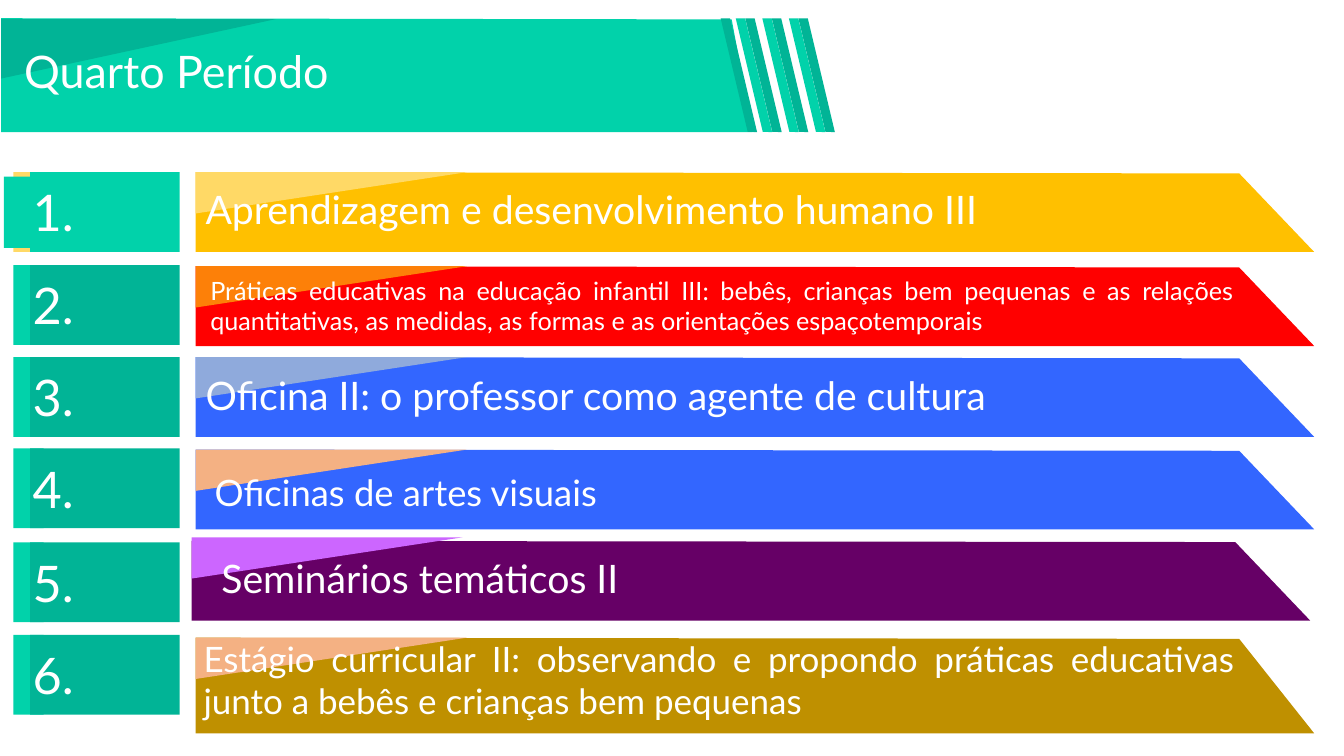
from pptx import Presentation
from pptx.dml.color import RGBColor
from pptx.enum.shapes import MSO_SHAPE
from pptx.enum.text import PP_ALIGN
from pptx.util import Cm, Pt

COLORS = {
    "teal": "01D2AA",
    "dark teal": "01B496",
    "white": "FFFFFF",
    "amber": "FFC000",
    "light amber": "FFD966",
    "red": "FF0000",
    "orange": "FD8008",
    "blue": "3366FF",
    "light blue": "8FAADC",
    "peach": "F4B183",
    "purple": "660066",
    "lilac": "CC66FF",
    "ochre": "BF9000",
}


def paint(shape, color):
    shape.shadow.inherit = False
    shape.fill.solid()
    shape.fill.fore_color.rgb = RGBColor.from_string(COLORS[color])
    shape.line.fill.background()


def add_text(page, text, left, top, width, height, size, align):
    box = page.shapes.add_textbox(Cm(left), Cm(top), Cm(width), Cm(height))
    box.text_frame.word_wrap = True
    para = box.text_frame.paragraphs[0]
    para.alignment = align
    span = para.add_run()
    span.text = text
    span.font.name = "Lato"
    span.font.size = Pt(size)
    span.font.color.rgb = RGBColor.from_string(COLORS["white"])
    return box


deck = Presentation()
deck.slide_width = Cm(33.87)
deck.slide_height = Cm(19.05)
page = deck.slides.add_slide(deck.slide_layouts[6])

title_size = (18.41, 18.94, 2.87, 6.93, 1.5)
bar_size = (26.3, 28.19, 2.01, 6.83, 1.04)
tall_bar_size = (26.3, 28.19, 2.41, 6.83, 1.04)

banners = [
    (0.03, 0.46, title_size, "teal", "dark teal", 0.48,
     "Quarto Período", (0.36, 0.97, 18.14, 1.63), 32),
    (4.93, 4.34, bar_size, "amber", "light amber", 4.34,
     "Aprendizagem e desenvolvimento humano III", (4.93, 4.55, 26.29, 1.45), 28),
    (4.93, 6.71, bar_size, "red", "orange", 6.71,
     "Práticas educativas na educação infantil III: bebês, crianças bem pequenas "
     "e as relações quantitativas, as medidas, as formas e as orientações "
     "espaçotemporais", (5.05, 6.81, 26.29, 1.8), 18),
    (4.93, 9, bar_size, "blue", "light blue", 9,
     "Oficina II: o professor como agente de cultura", (4.93, 9.22, 26.29, 1.45), 28),
    (4.93, 11.33, bar_size, "blue", "peach", 11.33,
     "Oficinas de artes visuais", (5.16, 11.73, 26.29, 1.37), 26),
    (4.83, 13.63, bar_size, "purple", "lilac", 13.54,
     "Seminários temáticos II", (5.33, 13.84, 26.29, 1.45), 28),
    (4.93, 16.07, tall_bar_size, "ochre", "peach", 16.07,
     "Estágio curricular II: observando e propondo práticas educativas junto a "
     "bebês e crianças bem pequenas", (4.88, 15.93, 26.47, 2.39), 25),
]

for left, top, size, color, corner_color, corner_top, text, frame, points in banners:
    top_width, width, height, corner_width, corner_height = size
    outline = page.shapes.build_freeform(Cm(left), Cm(top))
    outline.add_line_segments([
        (Cm(left + top_width), Cm(top + 0.03)),
        (Cm(left + width), Cm(top + height)),
        (Cm(left), Cm(top + height)),
    ])
    paint(outline.convert_to_shape(), color)

    offset = (corner_width - corner_height) / 2
    corner = page.shapes.add_shape(
        MSO_SHAPE.RIGHT_TRIANGLE, Cm(left + offset), Cm(corner_top - offset),
        Cm(corner_height), Cm(corner_width))
    corner.rotation = 90
    paint(corner, corner_color)
    add_text(page, text, *frame, points, PP_ALIGN.JUSTIFY)

stripes = [(17.12, "dark teal")]
for pair in range(3):
    stripes.append((17.5 + 0.67 * pair, "teal"))
    stripes.append((17.74 + 0.67 * pair, "dark teal"))

for left, color in stripes:
    stripe = page.shapes.add_shape(
        MSO_SHAPE.PARALLELOGRAM, Cm(left), Cm(1.78), Cm(3), Cm(0.23))
    stripe.adjustments[0] = 0.24
    stripe.rotation = 76.6
    paint(stripe, color)

tile_tops = [4.34, 6.68, 9, 11.3, 13.67, 16]
for number, top in enumerate(tile_tops, 1):
    first = number == 1
    edge_color = "light amber" if first else "teal"
    tile_color = "teal" if first else "dark teal"
    for left, width, color in [(0.34, 0.76, edge_color), (0.76, 3.77, tile_color)]:
        tile = page.shapes.add_shape(
            MSO_SHAPE.RECTANGLE, Cm(left), Cm(top), Cm(width), Cm(2.01))
        paint(tile, color)
    label = add_text(page, f"{number}.", 0.1, top + 0.11, 2.01, 1.8, 36, PP_ALIGN.RIGHT)
    if first:
        label.fill.solid()
        label.fill.fore_color.rgb = RGBColor.from_string(COLORS["teal"])

deck.save("out.pptx")
